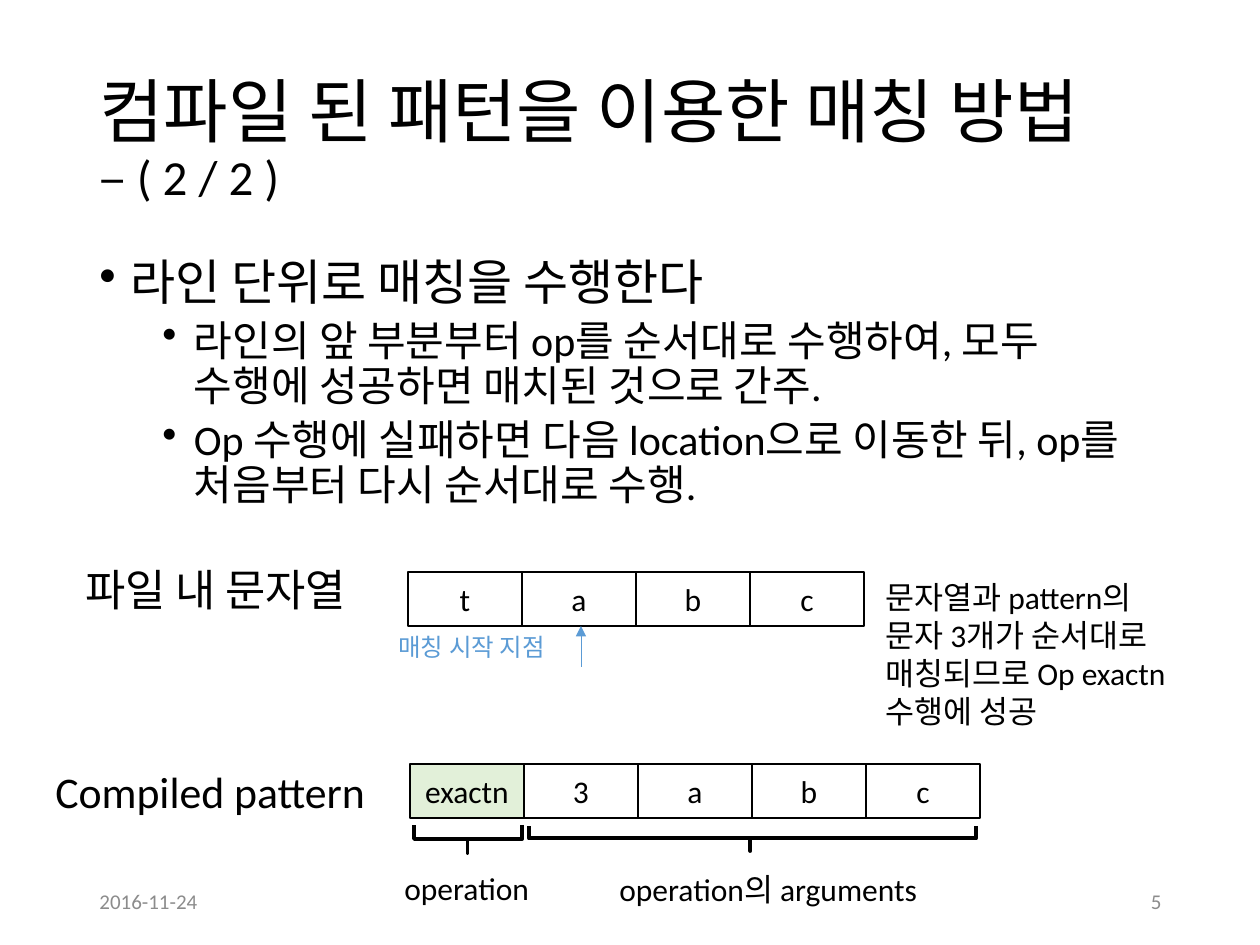
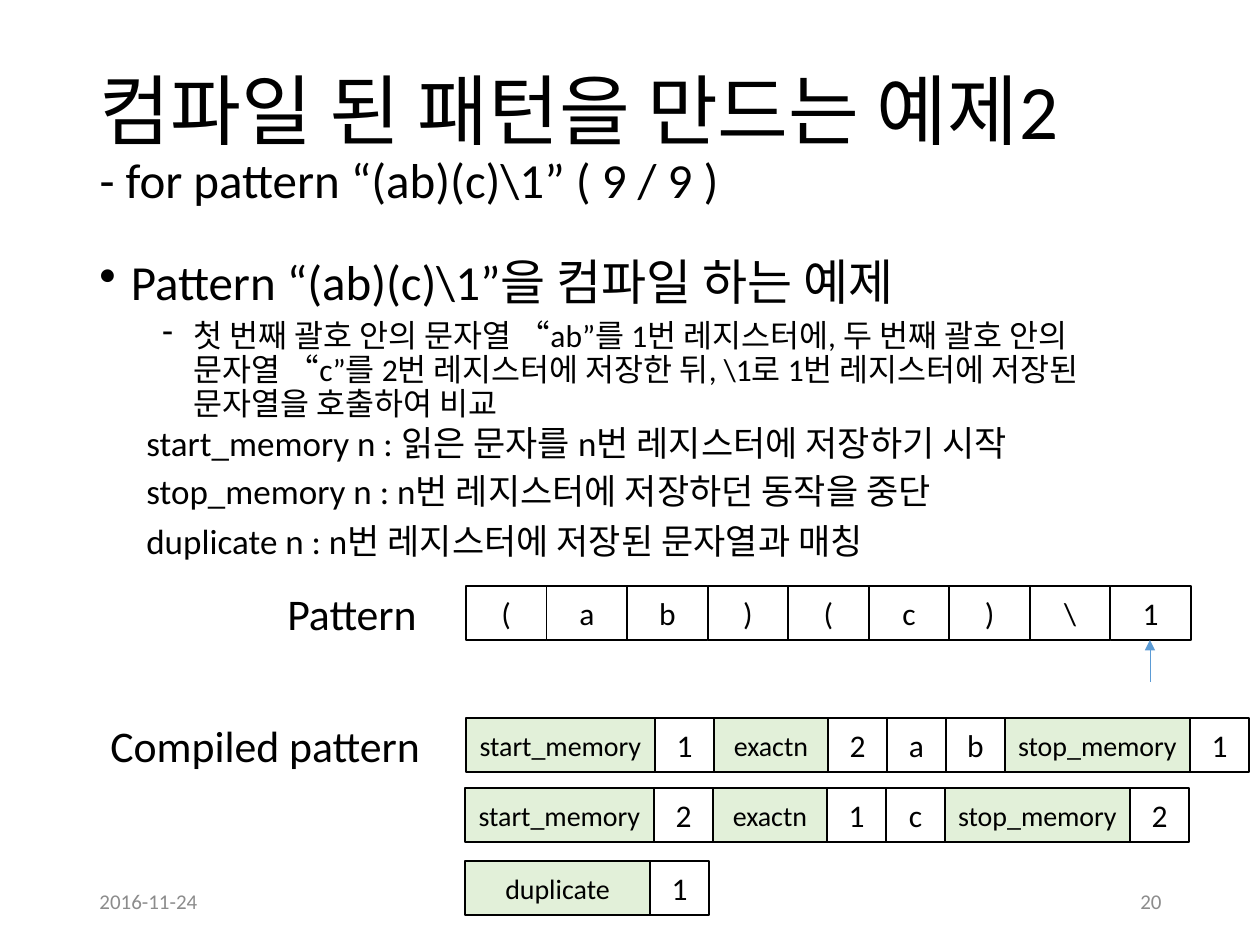
from lxml.etree import SubElement
from pptx import Presentation
from pptx.dml.color import RGBColor
from pptx.enum.shapes import MSO_CONNECTOR, MSO_SHAPE
from pptx.enum.text import MSO_ANCHOR, MSO_AUTO_SIZE, PP_ALIGN
from pptx.oxml.ns import qn
from pptx.util import Pt

PX = 914400 / 126
COLORS = {"ink": "000000", "operation": "E2F0D9", "pointer": "5B9BD5", "footer": "8C8C8C"}
FONT = "Calibri"
CELL_HEIGHT = 54
REGISTER_CELL = 59
OPERATION_WIDTHS = {"start_memory": 189, "stop_memory": 185, "exactn": 114, "duplicate": 185}


def emu(*lengths):
    return [round(length * PX) for length in lengths]


def rgb(name):
    return RGBColor.from_string(COLORS[name])


class Deck:
    def __init__(self):
        self.prs = Presentation()
        self.prs.slide_width, self.prs.slide_height = emu(1260, 945)
        self.slide = None

    def style(self, paragraph, size, color="ink", align=PP_ALIGN.LEFT):
        paragraph.alignment = align
        for run in paragraph.runs:
            run.font.name = FONT
            run.font.size = Pt(size)
            run.font.color.rgb = rgb(color)

    def start(self, heading, heading_size, subheading, number):
        """Add a slide with its two-line title, date and slide number."""
        self.slide = self.prs.slides.add_slide(self.prs.slide_layouts[5])
        title = self.slide.shapes.title
        title.left, title.top, title.width, title.height = emu(87, 50, 1086, 183)
        frame = title.text_frame
        frame.text = f"{heading}\v{subheading}"
        frame.auto_size = MSO_AUTO_SIZE.NONE
        frame.vertical_anchor = MSO_ANCHOR.MIDDLE
        paragraph = frame.paragraphs[0]
        self.style(paragraph, heading_size)
        paragraph.line_spacing = 0.9
        paragraph.runs[1].font.size = Pt(28)
        footer = dict(size=12, color="footer", height=50, anchor=MSO_ANCHOR.MIDDLE)
        self.text("2016-11-24", 87, 876, 284, **footer)
        self.text(number, 890, 876, 284, align=PP_ALIGN.RIGHT, **footer)

    def text(self, words, left, top, width, size=18, color="ink", height=50,
             align=PP_ALIGN.LEFT, anchor=MSO_ANCHOR.TOP):
        frame = self.slide.shapes.add_textbox(*emu(left, top, width, height)).text_frame
        frame.word_wrap = True
        frame.vertical_anchor = anchor
        frame.text = words
        for paragraph in frame.paragraphs:
            self.style(paragraph, size, color, align)
        return frame

    def bullets(self, lead, details, mark, size):
        """Write a lead point with indented details below it."""
        frame = self.text("\n".join([lead, *details]), 87, 252, 1086, size, height=600)
        for index, paragraph in enumerate(frame.paragraphs):
            is_lead = index == 0
            paragraph.level = 0 if is_lead else 1
            paragraph.line_spacing = 0.9
            paragraph.space_before = Pt(10 if is_lead else 5)
            if is_lead:
                self.style(paragraph, 28)
            properties = paragraph._p.get_or_add_pPr()
            properties.set("marL", "228600" if is_lead else "685800")
            properties.set("indent", "-228600")
            SubElement(properties, qn("a:buChar"), char="•" if is_lead else mark)

    def cells(self, labels, left, top, cell_width, operation_size=16):
        """Draw a row of touching cells; operations are wider and tinted."""
        for label in labels:
            is_operation = label in OPERATION_WIDTHS
            width = OPERATION_WIDTHS.get(label, cell_width)
            cell = self.slide.shapes.add_shape(
                MSO_SHAPE.RECTANGLE, *emu(left, top, width, CELL_HEIGHT))
            cell.shadow.inherit = False
            if is_operation:
                cell.fill.solid()
                cell.fill.fore_color.rgb = rgb("operation")
            else:
                cell.fill.background()
            cell.line.color.rgb = rgb("ink")
            cell.line.width = Pt(1)
            cell.text_frame.text = label
            cell.text_frame.vertical_anchor = MSO_ANCHOR.MIDDLE
            self.style(cell.text_frame.paragraphs[0],
                       operation_size if is_operation else 18, align=PP_ALIGN.CENTER)
            left += width

    def brace(self, left, top, width, height):
        """Draw a square brace, sized before its quarter turn."""
        brace = self.slide.shapes.add_shape(
            MSO_SHAPE.RIGHT_BRACE, *emu(left, top, width, height))
        brace.rotation = 90
        brace.adjustments[0] = 0
        brace.adjustments[1] = 0.505
        brace.shadow.inherit = False
        brace.fill.background()
        brace.line.color.rgb = rgb("ink")
        brace.line.width = Pt(2.25)

    def pointer(self, x, bottom, top):
        arrow = self.slide.shapes.add_connector(
            MSO_CONNECTOR.STRAIGHT, *emu(x, bottom, x, top))
        arrow.line.color.rgb = rgb("pointer")
        arrow.line.width = Pt(0.5)
        SubElement(arrow.line._get_or_add_ln(), qn("a:tailEnd"), type="triangle")
        SubElement(arrow._element.spPr, qn("a:effectLst"))


def matching_slide(deck):
    deck.start("컴파일 된 패턴을 이용한 매칭 방법", 40, "– ( 2 / 2 )", "5")
    deck.bullets("라인 단위로 매칭을 수행한다", [
        "라인의 앞 부분부터 op를 순서대로 수행하여, 모두\v수행에 성공하면 매치된 것으로 간주.",
        "Op 수행에 실패하면 다음 location으로 이동한 뒤, op를 처음부터 다시 순서대로 수행.",
    ], "•", 24)

    deck.text("파일 내 문자열", 73, 557, 312, 25, height=66)
    deck.cells("tabc", 408, 572, 114)
    deck.pointer(581, 667, 626)
    deck.text("매칭 시작 지점", 386, 626, 185, 14, "pointer", height=43)
    deck.text("문자열과 pattern의\v문자 3개가 순서대로\v매칭되므로 Op exactn\v수행에 성공",
              873, 572, 426, height=165)

    deck.text("Compiled pattern", 43, 759, 367, 25, height=66)
    deck.cells(["exactn", *"3abc"], 410, 764, 114, operation_size=18)
    deck.brace(454, 785, 28, 108)
    deck.brace(740, 615, 25, 447)
    deck.text("operation", 392, 863, 151)
    deck.text("operation의 arguments", 607, 864, 334)


def compiling_slide(deck):
    deck.start("컴파일 된 패턴을 만드는 예제2", 44, "- for pattern “(ab)(c)\\1” ( 9 / 9 )", "20")
    deck.bullets("Pattern “(ab)(c)\\1”을 컴파일 하는 예제", [
        "첫 번째 괄호 안의 문자열 “ab”를 1번 레지스터에, 두 번째 괄호 안의 문자열 “c”를 "
        "2번 레지스터에 저장한 뒤, \\1로 1번 레지스터에 저장된 문자열을 호출하여 비교",
    ], "-", 18)
    meanings = {
        415: "start_memory n : 읽은 문자를 n번 레지스터에 저장하기 시작",
        463: "stop_memory n : n번 레지스터에 저장하던 동작을 중단",
        513: "duplicate n : n번 레지스터에 저장된 문자열과 매칭",
    }
    for top, meaning in meanings.items():
        deck.text(meaning, 134, top, 969, 20, height=55)

    pattern = "(ab)(c)\\1"
    deck.text("Pattern", 275, 581, 321, 25, height=66)
    deck.cells(pattern, 466, 586, 725 / len(pattern))
    deck.pointer(1150, 682, 640)

    deck.text("Compiled pattern", 98, 713, 367, 25, height=66)
    compiled_rows = [
        (466, 718, ["start_memory", "1", "exactn", *"2ab", "stop_memory", "1"]),
        (465, 788, ["start_memory", "2", "exactn", *"1c", "stop_memory", "2"]),
        (465, 861, ["duplicate", "1"]),
    ]
    for left, top, labels in compiled_rows:
        deck.cells(labels, left, top, REGISTER_CELL)


def main():
    deck = Deck()
    matching_slide(deck)
    compiling_slide(deck)
    deck.prs.save("out.pptx")


if __name__ == "__main__":
    main()
